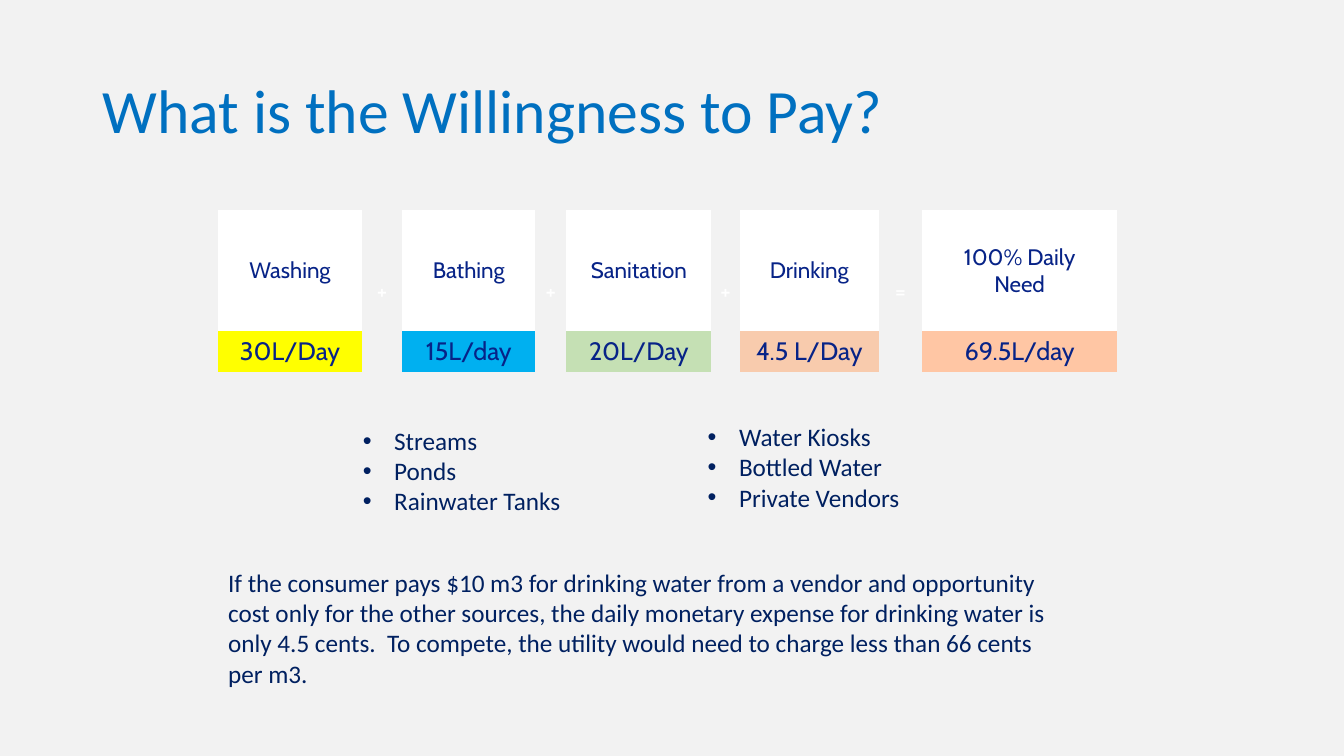
from lxml.etree import SubElement
from pptx import Presentation
from pptx.dml.color import RGBColor
from pptx.enum.text import MSO_ANCHOR, MSO_AUTO_SIZE, PP_ALIGN
from pptx.oxml.ns import qn
from pptx.util import Cm, Pt

NAVY = "002060"
TABLE_BLUE = "072387"
WHITE = "FFFFFF"
NO_STYLE = "{2D5ABB26-0587-4C30-8999-92F81FD0307C}"


def color(hex_string):
    return RGBColor.from_string(hex_string)


def format_paragraph(paragraph, font_name, size, hex_string, alignment=PP_ALIGN.LEFT):
    paragraph.alignment = alignment
    paragraph.space_before = Pt(0)
    paragraph.font.name = font_name
    paragraph.font.size = Pt(size)
    paragraph.font.color.rgb = color(hex_string)


presentation = Presentation()
presentation.slide_width = Cm(33.87)
presentation.slide_height = Cm(19.05)
slide = presentation.slides.add_slide(presentation.slide_layouts[3])
slide.background.fill.solid()
slide.background.fill.fore_color.rgb = color("F2F2F2")

title, sources_list, vendors_list = slide.placeholders
title.left, title.top, title.width, title.height = Cm(2.33), Cm(1.01), Cm(29.21), Cm(3.68)
title.text_frame.text = "What is the Willingness to Pay?"
title.text_frame.vertical_anchor = MSO_ANCHOR.MIDDLE
title.text_frame.paragraphs[0].line_spacing = 0.9
format_paragraph(title.text_frame.paragraphs[0], "Calibri", 44, "0070C0")

uses = [
    ("Washing", "30L/Day", "FFFF00"),
    ("Bathing", "15L/day", "00B0F0"),
    ("Sanitation", "20L/Day", "C5E0B4"),
    ("Drinking", "4.5 L/Day", "F8CBAD"),
    ("100% Daily\nNeed", "69.5L/day", "FFC6A4"),
]
column_widths = [3.62, 1.02, 3.35, 0.78, 3.66, 0.71, 3.51, 1.08, 4.93]
row_heights = [3.06, 1.03]
frame = slide.shapes.add_table(
    2, len(column_widths), Cm(5.5), Cm(5.29), Cm(sum(column_widths)), Cm(sum(row_heights))
)
table = frame.table
table.first_row = False
table.horz_banding = False
table._tbl.tblPr.find(qn("a:tableStyleId")).text = NO_STYLE
for column, width in zip(table.columns, column_widths):
    column.width = Cm(width)
for row, height in zip(table.rows, row_heights):
    row.height = Cm(height)

cells = []
for index, (use, amount, fill) in enumerate(uses):
    cells.append((0, 2 * index, use, 16, TABLE_BLUE, WHITE))
    cells.append((1, 2 * index, amount, 18, TABLE_BLUE, fill))
for index, operator in enumerate("+++="):
    column = 2 * index + 1
    table.cell(0, column).merge(table.cell(1, column))
    cells.append((0, column, operator, 16, WHITE, None))

for row, column, text, size, text_color, fill in cells:
    cell = table.cell(row, column)
    cell.text = text
    cell.vertical_anchor = MSO_ANCHOR.MIDDLE
    cell.margin_left = cell.margin_right = Cm(0.1)
    cell.margin_top = cell.margin_bottom = Cm(0.1)
    if fill:
        cell.fill.solid()
        cell.fill.fore_color.rgb = color(fill)
    else:
        cell.fill.background()
    for paragraph in cell.text_frame.paragraphs:
        format_paragraph(paragraph, "Cabin", size, text_color, PP_ALIGN.CENTER)

lists = [
    (sources_list, 8.89, 10.59, 5.92, 3.33, ["Streams", "Ponds", "Rainwater Tanks"]),
    (vendors_list, 17.58, 10.49, 8.26, 4.11, ["Water Kiosks", "Bottled Water", "Private Vendors"]),
]
for placeholder, left, top, width, height, items in lists:
    placeholder.left, placeholder.top = Cm(left), Cm(top)
    placeholder.width, placeholder.height = Cm(width), Cm(height)
    placeholder.text_frame.text = "\n".join(items)
    placeholder.text_frame.auto_size = MSO_AUTO_SIZE.NONE
    for paragraph in placeholder.text_frame.paragraphs:
        format_paragraph(paragraph, "Calibri", 18, NAVY)
        properties = paragraph._p.get_or_add_pPr()
        properties.set("marL", str(Cm(0.79)))
        properties.set("indent", str(-Cm(0.79)))
        bullet_font = SubElement(properties, qn("a:buFont"), typeface="Arial")
        bullet = SubElement(properties, qn("a:buChar"), char="•")
        properties.find(qn("a:defRPr")).addprevious(bullet_font)
        bullet_font.addnext(bullet)

conclusion = slide.shapes.add_textbox(Cm(5.5), Cm(14.17), Cm(21.59), Cm(3.33))
conclusion.text_frame.word_wrap = True
conclusion.text_frame.text = (
    "If the consumer pays $10 m3 for drinking water from a vendor and opportunity cost only "
    "for the other sources, the daily monetary expense for drinking water is only 4.5 cents.  "
    "To compete, the utility would need to charge less than 66 cents per m3."
)
format_paragraph(conclusion.text_frame.paragraphs[0], "Calibri", 18, NAVY)

presentation.save("out.pptx")
